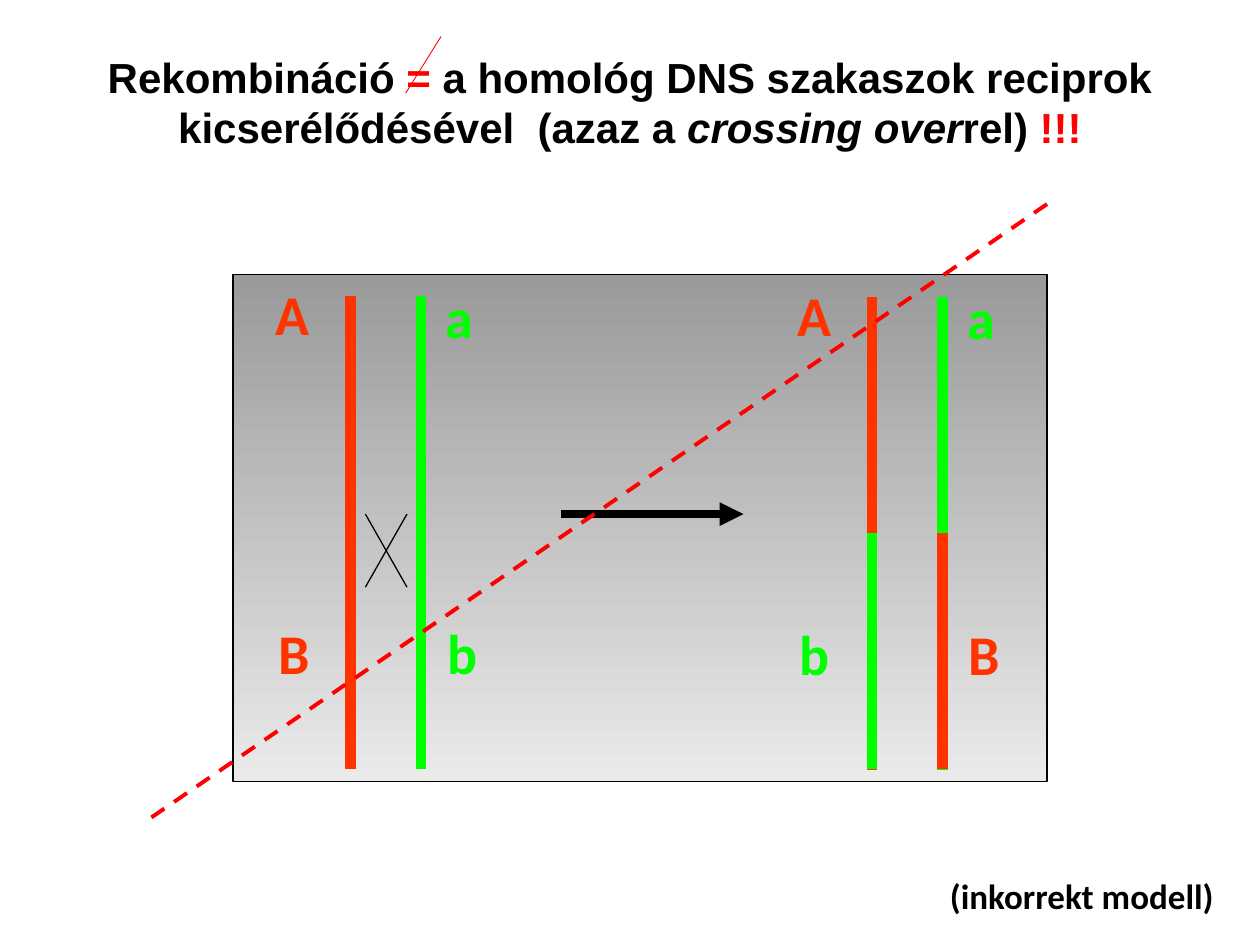
from dataclasses import dataclass
from lxml.etree import SubElement as Sub
from pptx import Presentation
from pptx.dml.color import RGBColor as RGB
from pptx.enum.dml import MSO_LINE as Dash
from pptx.enum.shapes import MSO_CONNECTOR as Conn, MSO_SHAPE as Form
from pptx.enum.text import MSO_AUTO_SIZE as Fit, PP_ALIGN as Align
from pptx.oxml.ns import qn
from pptx.util import Inches, Pt


@dataclass(frozen=True)
class Theme:
    red: str = "FF0000"
    orange: str = "FF3300"
    green: str = "00FF00"
    black: str = "000000"
    dark: str = "9A9A9A"
    light: str = "EAEAEA"
    head: str = "Arial"
    body: str = "Calibri"
    title: int = 24
    gene: int = 32
    note: int = 20


T = Theme()


def add_text(slide, runs, box, font=T.body, size=T.gene, color=T.black,
             align=Align.LEFT, wrap=False):
    shape = slide.shapes.add_textbox(*map(Inches, box))
    frame = shape.text_frame
    frame.word_wrap = wrap
    frame.auto_size = Fit.SHAPE_TO_FIT_TEXT
    para = frame.paragraphs[0]
    para.alignment = align
    for text, style in runs:
        run = para.add_run()
        run.text = text
        run.font.name = font
        run.font.size = Pt(size)
        run.font.bold = True
        run.font.italic = style.get("italic", False)
        run.font.color.rgb = RGB.from_string(style.get("color", color))


def add_line(slide, start, end, color=T.black, width=0.75, dash=None, arrow=False):
    line = slide.shapes.add_connector(
        Conn.STRAIGHT, *map(Inches, (*start, *end)))
    line.line.color.rgb = RGB.from_string(color)
    line.line.width = Pt(width)
    if dash:
        line.line.dash_style = dash
    if arrow:
        Sub(line.line._get_or_add_ln(), qn("a:tailEnd"), type="triangle")
    Sub(line._element.spPr, qn("a:effectLst"))


def add_strand(slide, x, top, end, color):
    add_line(slide, (x, top), (x, end), color, width=6)


def add_gene(slide, name, left, top, color):
    width = 0.52 if name.isupper() else 0.44
    add_text(slide, [(name, {})], (left, top, width, 0.64), color=color)


def add_panel(slide):
    panel = slide.shapes.add_shape(
        Form.RECTANGLE, *map(Inches, (1.85, 2.18, 6.46, 4.02)))
    panel.shadow.inherit = False
    panel.fill.gradient()
    panel.fill.gradient_angle = 270
    for stop, color, place in zip(
            panel.fill.gradient_stops, (T.dark, T.light), (0, 1)):
        stop.color.rgb = RGB.from_string(color)
        stop.position = place
    panel.line.color.rgb = RGB.from_string(T.black)
    panel.line.width = Pt(0.75)


def add_pair(slide, x, top, low):
    add_strand(slide, x, top, top + 3.75, T.orange)
    add_strand(slide, x + 0.56, top, top + 3.75, T.green)
    left, right = low
    genes = (("A", -0.69, -0.18, T.orange), ("a", 0.66, -0.16, T.green),
             (left[0], -0.67, 2.51, left[1]), (right[0], 0.67, 2.51, right[1]))
    for name, dx, dy, color in genes:
        add_gene(slide, name, x + dx, top + dy, color)


def add_title(slide):
    runs = [
        ("Rekombináció ", {}),
        ("=", {"color": T.red}),
        (" a homológ DNS szakaszok reciprok kicserélődésével  (azaz a ", {}),
        ("crossing over", {"italic": True}),
        ("rel) ", {}),
        ("!!!", {"color": T.red}),
    ]
    add_text(slide, runs, (0, 0.36, 10, 0.91), font=T.head, size=T.title,
             align=Align.CENTER, wrap=True)
    add_line(slide, (3.5, 0.29), (3.22, 0.74), T.red, width=0.5)


def main():
    deck = Presentation()
    deck.slide_width, deck.slide_height = Inches(10), Inches(7.5)
    slide = deck.slides.add_slide(deck.slide_layouts[6])

    add_panel(slide)
    upper, lower = ("B", T.orange), ("b", T.green)
    add_pair(slide, 2.78, 2.35, (upper, lower))
    add_line(slide, (2.9, 4.08), (3.23, 4.66))
    add_line(slide, (2.9, 4.66), (3.23, 4.08))
    add_pair(slide, 6.92, 2.36, (lower, upper))
    add_line(slide, (4.45, 4.08), (5.9, 4.08), width=4.5, arrow=True)
    add_strand(slide, 6.92, 4.23, 6.1, T.green)
    add_strand(slide, 7.48, 4.23, 6.1, T.orange)
    add_title(slide)
    add_text(slide, [("(inkorrekt modell)", {})], (7.44, 6.89, 2.41, 0.44),
             size=T.note)
    add_line(slide, (8.31, 1.62), (1.14, 6.53), T.red, width=2.25, dash=Dash.DASH)
    deck.save("out.pptx")


if __name__ == "__main__":
    main()
